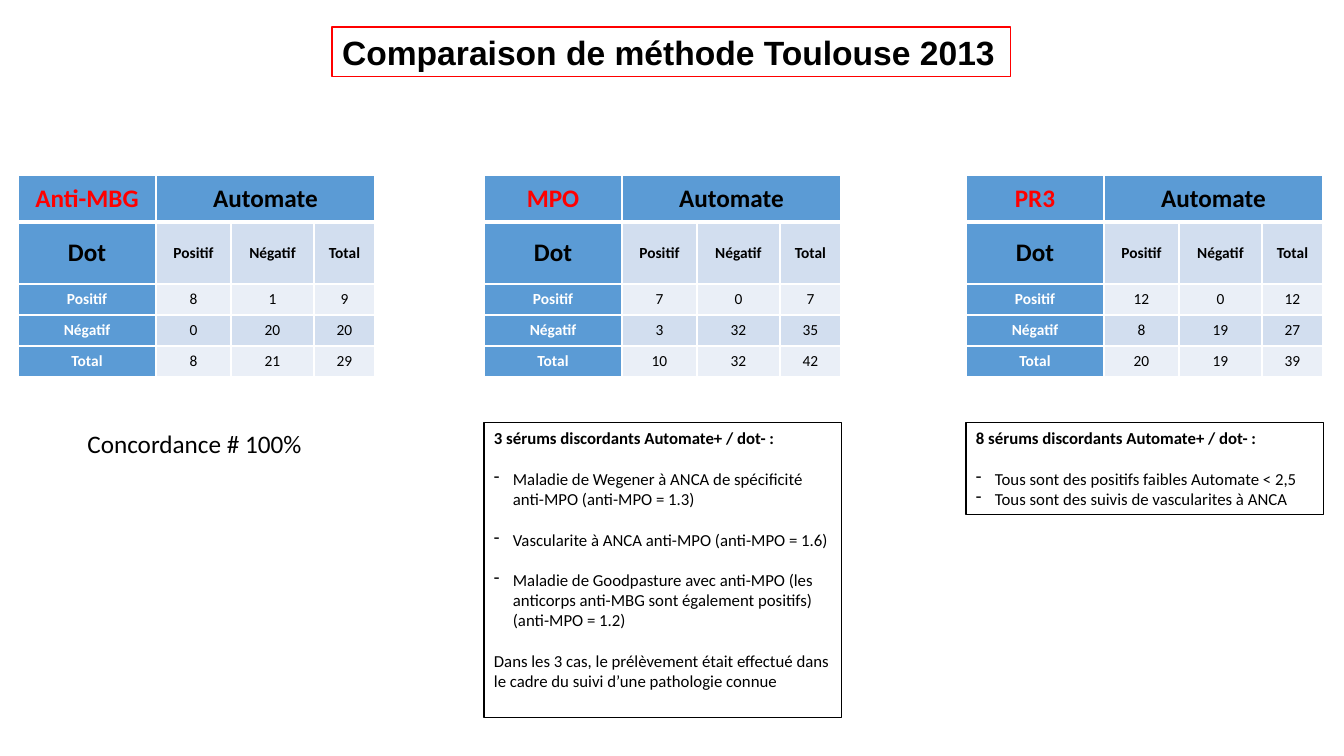
from dataclasses import dataclass

from lxml import etree
from pptx import Presentation
from pptx.dml.color import RGBColor
from pptx.enum.shapes import MSO_SHAPE
from pptx.enum.text import MSO_ANCHOR, MSO_AUTO_SIZE, PP_ALIGN
from pptx.oxml.ns import qn
from pptx.util import Emu, Pt

LEFT, CENTER = PP_ALIGN.LEFT, PP_ALIGN.CENTER
TOP, MIDDLE = MSO_ANCHOR.TOP, MSO_ANCHOR.MIDDLE
FIXED = MSO_AUTO_SIZE.NONE
RECT = MSO_SHAPE.RECTANGLE
TITLE_ONLY = 5
SCALE = 914400 / 100.8


@dataclass(frozen=True)
class Theme:
    head: str = "Arial"
    body: str = "Calibri"
    red: str = "FF0000"
    black: str = "000000"
    white: str = "FFFFFF"
    blue: str = "5B9BD5"
    bands: tuple = ("EAEFF7", "D2DEEF")
    title: int = 24
    large: int = 18
    note: int = 12
    small: int = 11
    gap: float = 14.6
    line: float = 0.75


THEME = Theme()
LABELS = ("Positif", "Négatif", "Total")
COLS = (138, 75, 83, 61)
ROWS = (47, 62, 31, 31, 31)
TABLE_TOP, NOTE_TOP, WIDTH = 175, 423, 358

MPO_NOTE = (
    ("3 sérums discordants Automate+ / dot- :", "head"),
    ("Maladie de Wegener à ANCA de spécificité anti-MPO (anti-MPO = 1.3)", "gap item"),
    ("Vascularite à ANCA anti-MPO (anti-MPO = 1.6)", "gap item"),
    ("Maladie de Goodpasture avec anti-MPO (les anticorps anti-MBG sont "
     "également positifs) (anti-MPO = 1.2)", "gap item"),
    ("Dans les 3 cas, le prélèvement était effectué dans le cadre du suivi "
     "d’une pathologie connue", "gap"),
)
PR3_NOTE = (
    ("8 sérums discordants Automate+ / dot- :", "head"),
    ("Tous sont des positifs faibles Automate < 2,5", "gap item"),
    ("Tous sont des suivis de vascularites à ANCA", "item"),
)


def px(n):
    return Emu(round(n * SCALE))


def rgb(code):
    return RGBColor.from_string(code)


def write(par, text, size, color=THEME.black, bold=False, align=LEFT, face=THEME.body):
    par.text = text
    par.alignment = align
    font = par.font
    font.name, font.size, font.bold = face, Pt(size), bold
    font.color.rgb = rgb(color)


def outline(shape, color):
    shape.fill.background()
    shape.line.color.rgb = rgb(color)
    shape.line.width = Pt(THEME.line)


def set_title(slide, x, y, w, h):
    title = slide.shapes.title
    title.left, title.top, title.width, title.height = map(px, (x, y, w, h))
    outline(title, THEME.red)
    frame = title.text_frame
    frame.auto_size, frame.word_wrap = FIXED, False
    frame.vertical_anchor = MIDDLE
    write(frame.paragraphs[0], "Comparaison de méthode Toulouse 2013",
          THEME.title, bold=True, face=THEME.head)


def set_edges(cell, row):
    props = cell._tc.get_or_add_tcPr()
    heavy = {0: "lnB", 1: "lnT"}.get(row)
    for spot, side in enumerate(("lnL", "lnR", "lnT", "lnB")):
        edge = etree.Element(qn(f"a:{side}"), w=str(Pt(3 if side == heavy else 1)))
        fill = etree.SubElement(edge, qn("a:solidFill"))
        etree.SubElement(fill, qn("a:srgbClr"), val=THEME.white)
        props.insert(spot, edge)


def fill_cell(cell, text, row, col):
    cell.fill.solid()
    key = row == 0 or col == 0
    cell.fill.fore_color.rgb = rgb(THEME.blue if key else THEME.bands[row % 2])
    cell.vertical_anchor = MIDDLE
    cell.margin_left = cell.margin_right = px(5)
    cell.margin_top = cell.margin_bottom = 0
    set_edges(cell, row)
    color = THEME.black
    if row + col == 0:
        color = THEME.red
    elif col == 0 and row > 1:
        color = THEME.white
    large = row == 0 or (row == 1 and col == 0)
    write(cell.text_frame.paragraphs[0], str(text), THEME.large if large else THEME.small,
          color, row < 2 or col == 0, CENTER)


def add_counts(slide, x, y, name, counts):
    rows = [(*pair, sum(pair)) for pair in counts]
    rows.append(tuple(map(sum, zip(*rows))))
    grid = [(name, "Automate", "", ""), ("Dot", *LABELS)]
    grid += [(label, *row) for label, row in zip(LABELS, rows)]
    frame = slide.shapes.add_table(len(ROWS), len(COLS), px(x), px(y),
                                   px(sum(COLS)), px(sum(ROWS)))
    table = frame.table
    for col, size in zip(table.columns, COLS):
        col.width = px(size)
    for row, size in zip(table.rows, ROWS):
        row.height = px(size)
    for r, line in enumerate(grid):
        for c, text in enumerate(line):
            fill_cell(table.cell(r, c), text, r, c)
    table.cell(0, 1).merge(table.cell(0, 3))


def add_note(slide, x, y, w, h, lines):
    box = slide.shapes.add_shape(RECT, px(x), px(y), px(w), px(h))
    box.shadow.inherit = False
    outline(box, THEME.black)
    frame = box.text_frame
    frame.word_wrap = True
    frame.vertical_anchor = TOP
    for i, (text, kind) in enumerate(lines):
        par = frame.add_paragraph() if i else frame.paragraphs[0]
        write(par, text, THEME.note, bold=kind == "head")
        if "gap" in kind:
            par.space_before = Pt(THEME.gap)
        if "item" in kind:
            props = par._p.get_or_add_pPr()
            props.set("marL", str(px(19)))
            props.set("indent", str(-px(19)))
            etree.SubElement(props, qn("a:buChar"), char="-")


def add_remark(slide, x, y, w, h, text):
    box = slide.shapes.add_textbox(px(x), px(y), px(w), px(h))
    box.text_frame.word_wrap = False
    write(box.text_frame.paragraphs[0], text, THEME.large, align=CENTER)


def main():
    deck = Presentation()
    deck.slide_width, deck.slide_height = px(1344), px(756)
    slide = deck.slides.add_slide(deck.slide_layouts[TITLE_ONLY])
    set_title(slide, 332, 27, 679, 50)
    mbg, mpo, pr3 = 18, 484, 966
    add_counts(slide, mbg, TABLE_TOP, "Anti-MBG", ((8, 1), (0, 20)))
    add_remark(slide, mbg + 55, NOTE_TOP, 243, 40, "Concordance # 100%")
    add_counts(slide, mpo, TABLE_TOP, "MPO", ((7, 0), (3, 32)))
    add_note(slide, mpo, NOTE_TOP, WIDTH, 295, MPO_NOTE)
    add_counts(slide, pr3, TABLE_TOP, "PR3", ((12, 0), (8, 19)))
    add_note(slide, pr3, NOTE_TOP, WIDTH, 92, PR3_NOTE)
    deck.save("out.pptx")


if __name__ == "__main__":
    main()
